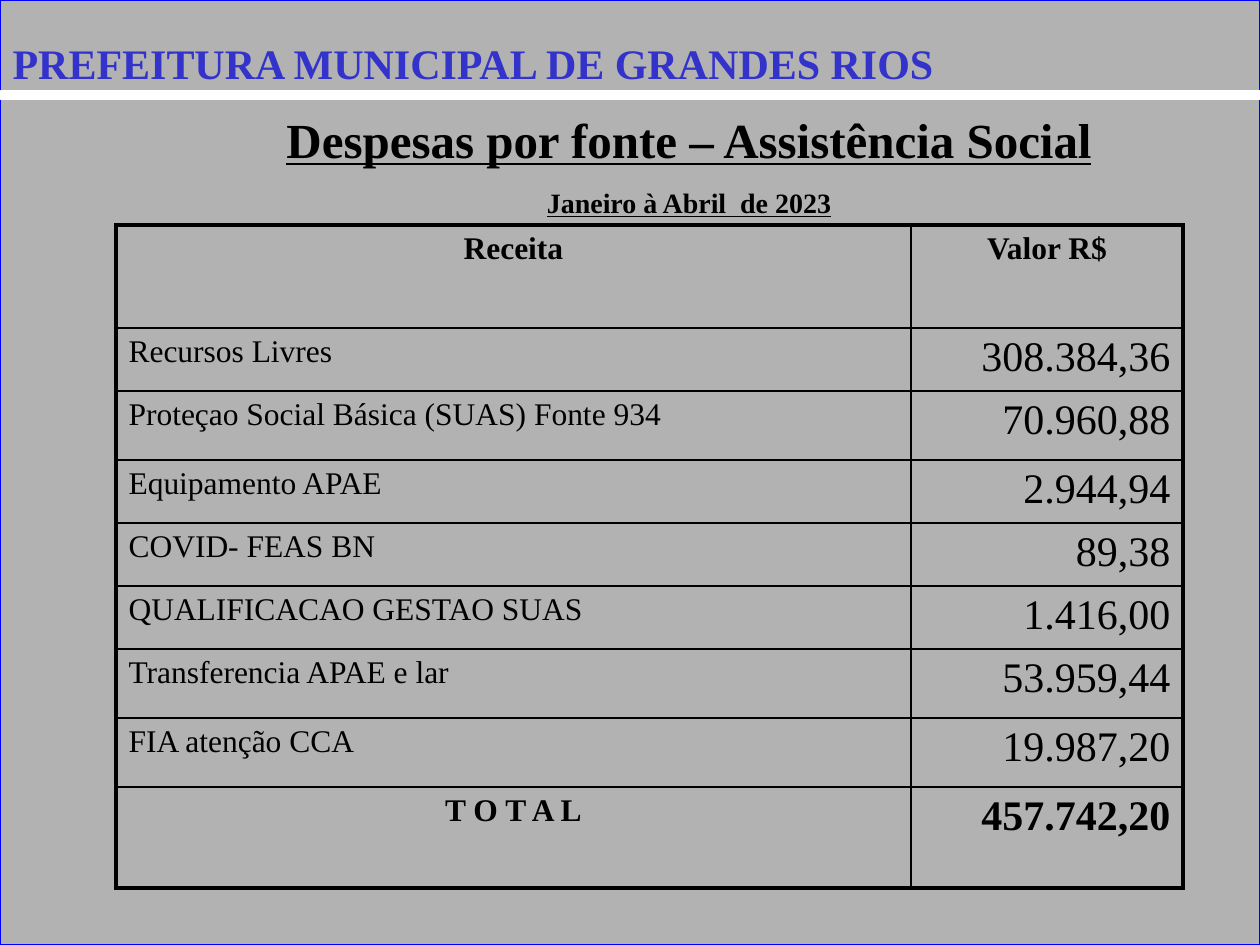
"""Build the slide of social assistance expenses by source of funds."""
from lxml import etree
from pptx import Presentation
from pptx.dml.color import RGBColor
from pptx.enum import shapes, text
from pptx.oxml import ns
from pptx.util import Emu, Pt

HEAD = "PREFEITURA MUNICIPAL DE GRANDES RIOS"
TITLES = [("Despesas por fonte – Assistência Social", 28), ("Janeiro à Abril  de 2023", 16)]
ROWS = [
    ("Receita", "Valor R$", 103),
    ("Recursos Livres", "308.384,36", 63),
    ("Proteçao Social Básica (SUAS) Fonte 934", "70.960,88", 69),
    ("Equipamento APAE", "2.944,94", 63),
    ("COVID- FEAS BN", "89,38", 63),
    ("QUALIFICACAO GESTAO SUAS", "1.416,00", 63),
    ("Transferencia APAE e lar", "53.959,44", 69),
    ("FIA atenção CCA", "19.987,20", 69),
    ("T O T A L", "457.742,20", 101),
]
COLS = (795, 272)
THEME = {
    "font": "Times New Roman", "back": "B2B2B2", "edge": "0000FF", "rule": "FFFFFF",
    "head": "3333CC", "ink": "000000", "shade": "808080",
    "big": 24, "label": 18, "thick": 2.25, "thin": 1,
}
LEFT, MID, RIGHT = text.PP_ALIGN.LEFT, text.PP_ALIGN.CENTER, text.PP_ALIGN.RIGHT


def px(num):
    return Emu(round(num * 914400 / 126))


def color(key):
    return RGBColor.from_string(THEME[key])


def node(root, tag, **attrs):
    return etree.SubElement(root, ns.qn(tag), attrs)


def place(shape, *box):
    shape.left, shape.top, shape.width, shape.height = map(px, box)


def style(para, size, align, bold=False, ink="ink", line=False):
    para.alignment = align
    font = para.font
    font.name, font.size, font.bold, font.underline = THEME["font"], Pt(size), bold, line
    font.color.rgb = color(ink)


def border(cell, widths):
    props = cell._tc.get_or_add_tcPr()
    for spot, (tag, wide) in enumerate(zip(("a:lnL", "a:lnR", "a:lnT", "a:lnB"), widths)):
        edge = etree.Element(ns.qn(tag), w=str(Pt(wide)))
        node(node(edge, "a:solidFill"), "a:srgbClr", val=THEME["ink"])
        props.insert(spot, edge)


def backdrop(slide):
    back = slide.shapes.add_shape(shapes.MSO_SHAPE.RECTANGLE, 0, 0, px(1260), px(945))
    back.shadow.inherit = False
    back.fill.solid()
    back.fill.fore_color.rgb = color("back")
    back.line.color.rgb, back.line.width = color("edge"), Pt(0.75)
    rule = slide.shapes.add_connector(
        shapes.MSO_CONNECTOR.STRAIGHT, 0, px(95), px(1260), px(95))
    rule.line.color.rgb, rule.line.width = color("rule"), Pt(6)
    node(rule._element.spPr, "a:effectLst")
    tree = slide.shapes._spTree
    for spot, shape in enumerate((back, rule), 2):
        tree.insert(spot, shape._element)


def heading(slide):
    title = slide.shapes.title
    place(title, 0, 31, 1196, 63)
    frame = title.text_frame
    frame.text, frame.vertical_anchor = HEAD, text.MSO_ANCHOR.TOP
    para = frame.paragraphs[0]
    style(para, THEME["big"], LEFT, True, "head")
    font = para.runs[0].font
    font.color.rgb = color("head")
    cast = node(node(font._element, "a:effectLst"), "a:outerShdw",
                dist="35921", dir="2700000", algn="ctr")
    node(cast, "a:srgbClr", val=THEME["shade"])


def body(slide):
    box = slide.placeholders[1]
    place(box, 180, 74, 1018, 732)
    frame = box.text_frame
    for spot, (words, size) in enumerate(TITLES):
        para = frame.add_paragraph() if spot else frame.paragraphs[0]
        para.text, para.line_spacing, para.space_before = words, 1.5, Pt(0)
        style(para, size, MID, True, line=True)
        props = para._p.get_or_add_pPr()
        props.set("marL", "457200")
        props.set("indent", "-457200")
        node(props, "a:buNone")
        props.append(props.find(ns.qn("a:defRPr")))


def grid(slide):
    table = slide.shapes.add_table(
        len(ROWS), len(COLS), px(116), px(225),
        px(sum(COLS)), px(sum(row[2] for row in ROWS))).table
    table.first_row = table.horz_banding = False
    for col, wide in zip(table.columns, COLS):
        col.width = px(wide)
    last, thick, thin = len(ROWS) - 1, THEME["thick"], THEME["thin"]
    for num, (*words, tall) in enumerate(ROWS):
        table.rows[num].height = px(tall)
        bold = num in (0, last)
        for side, word in enumerate(words):
            cell = table.cell(num, side)
            cell.text = word
            cell.fill.background()
            value = side and num
            align = RIGHT if value else MID if bold else LEFT
            style(cell.text_frame.paragraphs[0],
                  THEME["big" if value else "label"], align, bold)
            outer = (side == 0, side == 1, num == 0, num == last)
            border(cell, [thick if out else thin for out in outer])


def main():
    deck = Presentation()
    deck.slide_width, deck.slide_height = px(1260), px(945)
    slide = deck.slides.add_slide(deck.slide_layouts[1])
    backdrop(slide)
    heading(slide)
    body(slide)
    grid(slide)
    deck.save("out.pptx")


if __name__ == "__main__":
    main()
